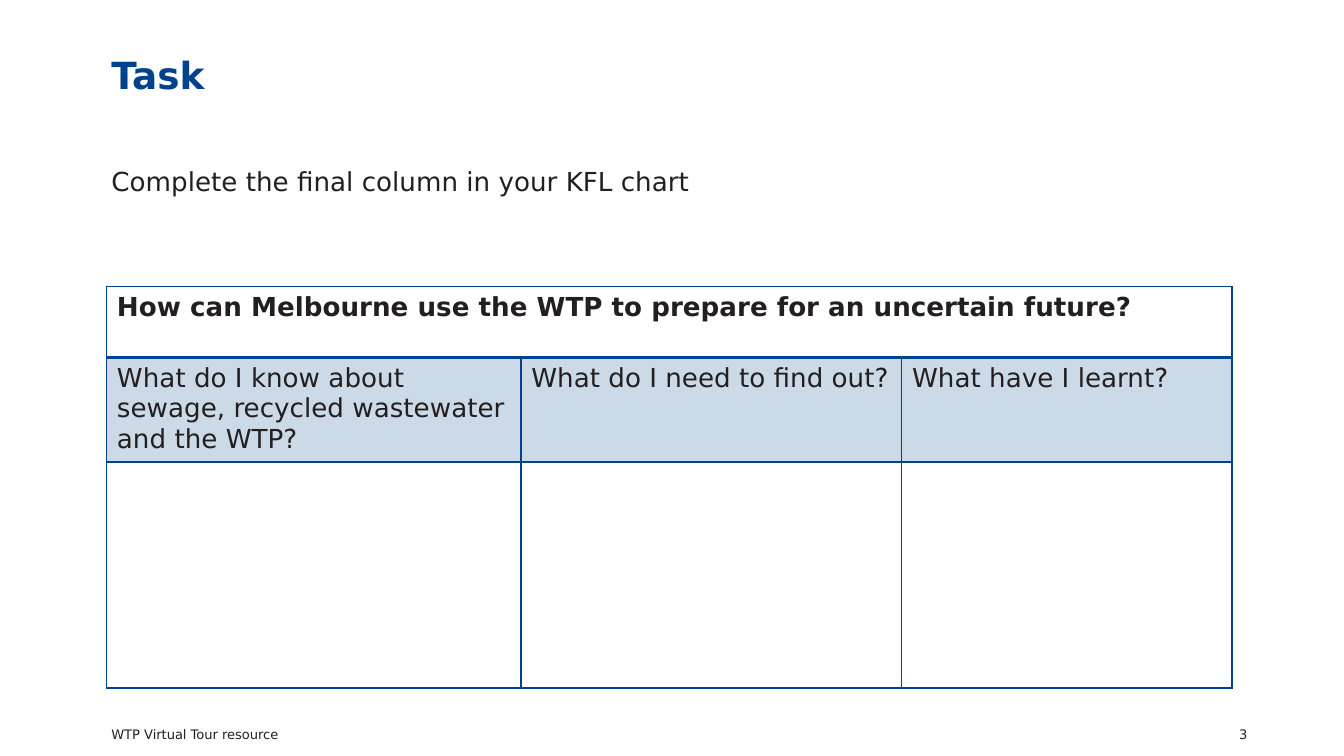
import pptx
import pptx.dml.color
import pptx.enum.text
import pptx.oxml
import pptx.oxml.ns
import pptx.util

Pt = pptx.util.Pt
ANCHOR = pptx.enum.text.MSO_ANCHOR
ALIGN = pptx.enum.text.PP_ALIGN
COLORS = {"blue": "00428B", "ink": "231F20"}
FONT = "DejaVu Sans"


def rgb(name):
    return pptx.dml.color.RGBColor.from_string(COLORS[name])


class SlideBuilder:
    """Holds the style and the current slide."""

    def __init__(self, slide):
        self.s = slide

    def style(self, tf, size, color="ink", bold=False):
        for p in tf.paragraphs:
            for r in p.runs:
                r.font.name, r.font.size, r.font.bold = FONT, Pt(size), bold
                r.font.color.rgb = rgb(color)

    def text(self, box, text, size, color="ink", bold=False,
             anchor=ANCHOR.MIDDLE, align=ALIGN.LEFT, spacing=1.0):
        sp = self.s.shapes.add_textbox(*map(Pt, box))
        tf = sp.text_frame
        tf.word_wrap = True
        tf.vertical_anchor = anchor
        tf.margin_left = tf.margin_right = Pt(2.7)
        tf.margin_top = tf.margin_bottom = Pt(2.7)
        tf.text = text
        p = tf.paragraphs[0]
        p.alignment, p.line_spacing = align, spacing
        self.style(tf, size, color, bold)

    def borders(self, cell, widths):
        tc_pr = cell._tc.get_or_add_tcPr()
        for side, width in widths.items():
            tc_pr.append(pptx.oxml.parse_xml(
                f'<a:ln{side} {pptx.oxml.ns.nsdecls("a")} w="{Pt(width)}">'
                f'<a:solidFill><a:srgbClr val="{COLORS["blue"]}"/></a:solidFill>'
                f'</a:ln{side}>'))

    def tint(self, cell, color, percent):
        cell.fill.solid()
        cell.fill.fore_color.rgb = rgb(color)
        clr = cell._tc.tcPr.find(".//" + pptx.oxml.ns.qn("a:solidFill")
                                 + "[last()]")
        clr = cell._tc.tcPr.findall(pptx.oxml.ns.qn("a:solidFill"))[-1][0]
        clr.append(pptx.oxml.parse_xml(
            f'<a:alpha {pptx.oxml.ns.nsdecls("a")} val="{percent * 1000}"/>'))

    def kfl_table(self, left, top, widths, heights, question, headings):
        table = self.s.shapes.add_table(
            len(heights), len(widths), Pt(left), Pt(top),
            Pt(sum(widths)), Pt(sum(heights))).table
        table.first_row = table.horz_banding = False
        for col, width in zip(table.columns, widths):
            col.width = Pt(width)
        for row, height in zip(table.rows, heights):
            row.height = Pt(height)
        table.cell(0, 0).merge(table.cell(0, len(widths) - 1))

        # Question row, heading row and empty answer row
        rows = [[question], headings, []]
        for i, texts in enumerate(rows):
            for j in range(len(widths)):
                cell = table.cell(i, j)
                sides = {} if cell.is_spanned else {"L": 1, "R": 1}
                sides["T"] = 2 if i == 1 else 1
                sides["B"] = 2 if i == 0 else 1
                self.borders(cell, sides)
                if i == 1:
                    self.tint(cell, "blue", 20)
                else:
                    cell.fill.background()
                cell.margin_left = cell.margin_right = Pt(5.67)
                cell.margin_top = cell.margin_bottom = Pt(2.83)
                if j < len(texts):
                    cell.text_frame.text = texts[j]
                    self.style(cell.text_frame, 14, bold=i == 0)


def main():
    prs = pptx.Presentation()
    prs.slide_width, prs.slide_height = Pt(720), Pt(405)
    b = SlideBuilder(prs.slides.add_slide(prs.slide_layouts[6]))

    # Title and instruction
    b.text((57, 4.3, 417, 74), "Task", 20, "blue", bold=True, spacing=0.9)
    b.text((57, 86, 465, 289), "Complete the final column in your KFL chart",
           14, anchor=ANCHOR.TOP)

    # KFL chart
    b.kfl_table(57, 153.5, (222, 204, 177), (38, 55, 121),
                "How can Melbourne use the WTP to prepare for an uncertain future?",
                ["What do I know about sewage, recycled wastewater and the WTP?",
                 "What do I need to find out?",
                 "What have I learnt?"])

    # Footer and page number
    b.text((57, 386.6, 243, 13), "WTP Virtual Tour resource", 7)
    b.text((624, 386.6, 47, 13), "3", 7, align=ALIGN.RIGHT)

    prs.save("out.pptx")


if __name__ == "__main__":
    main()
